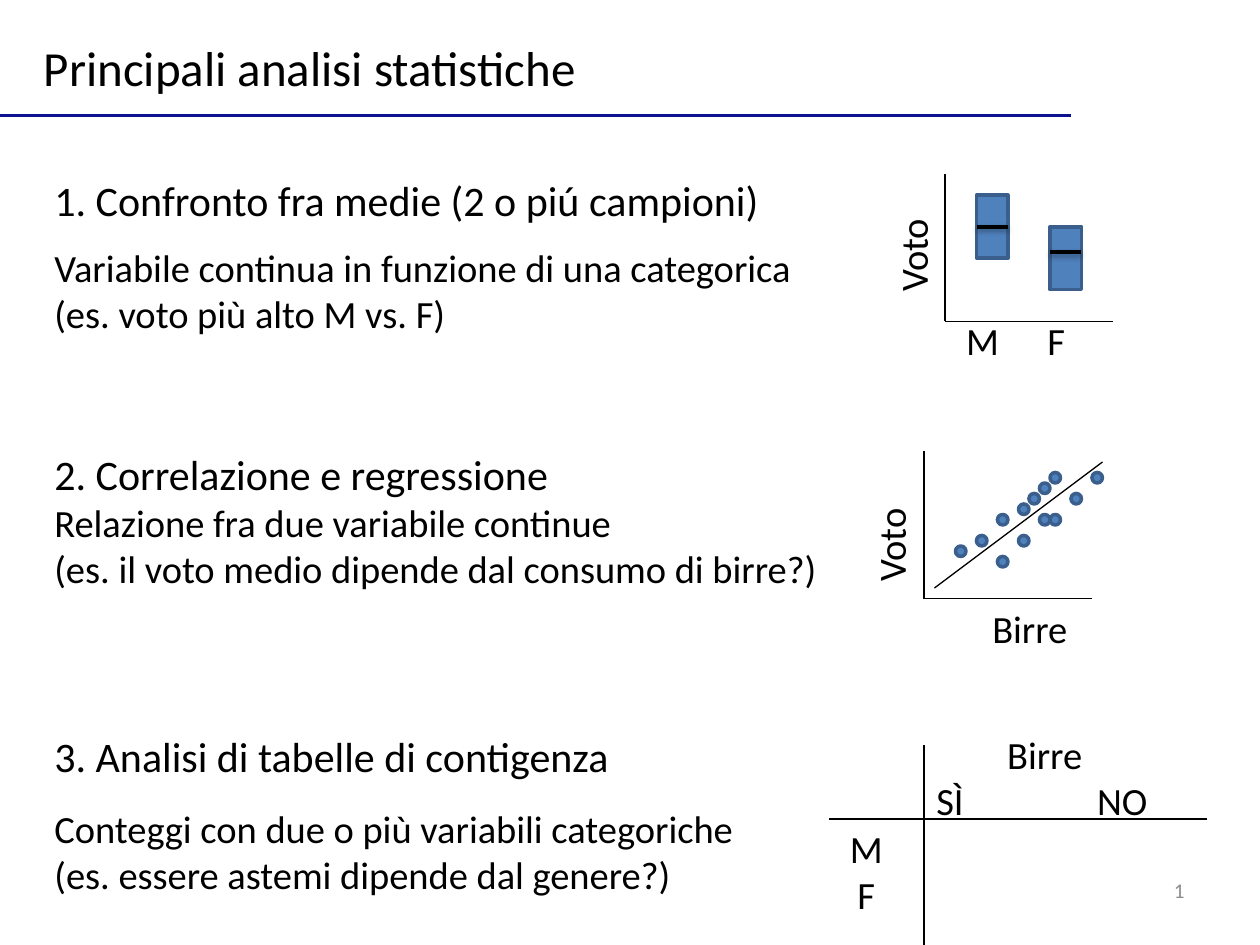
from dataclasses import dataclass
from lxml.etree import SubElement
from pptx import Presentation
from pptx.dml.color import RGBColor as Rgb
from pptx.enum.shapes import MSO_CONNECTOR as Conn, MSO_SHAPE as Kind
from pptx.enum.text import MSO_ANCHOR as Anchor, MSO_AUTO_SIZE as Fit, PP_ALIGN as Align
from pptx.oxml.ns import qn
from pptx.util import Pt


@dataclass(frozen=True)
class Theme:
    font: str = "Calibri"
    ink: str = "000000"
    rule: str = "0C1290"
    fill: str = "4F81BD"
    edge: str = "3A5F8C"
    mute: str = "8C8C8C"
    title: int = 28
    head: int = 24
    body: int = 22
    note: int = 12
    thin: float = 0.75
    bold: int = 2


T = Theme()
PX = 7620
WIDE, HIGH = 1200, 900
LEFT = 40
DOT = 10
BOX = (30, 60)
TAB = 153

TITLE = ("Principali analisi statistiche", (30, 30, 536, 68))
PAGE = ("1", (860, 824, 280, 48))
HEADS = [
    ("1. Confronto fra medie (2 o piú campioni)", 160, 701),
    ("2. Correlazione e regressione", 421, 499),
    ("3. Analisi di tabelle di contigenza", 690, 557),
]
NOTES = [
    (["Variabile continua in funzione di una categorica",
      "(es. voto più alto M vs. F)"], 226, 730, True),
    (["Relazione fra due variabile continue",
      "(es. il voto medio dipende dal consumo di birre?)"], 469, 758, False),
    (["Conteggi con due o più variabili categoriche",
      "(es. essere astemi dipende dal genere?)"], 760, 810, True),
]
LABELS = [
    (["M", "F"], (780, 779, 90, 101), 0),
    (["Birre "], (870, 570, 230, 56), 0),
    (["Voto "], (733, 487, 230, 56), 270),
    (["M "], (900, 296, 80, 56), 0),
    (["F "], (970, 296, 80, 56), 0),
    (["Voto "], (779, 211, 180, 56), 270),
]
LINES = [
    (880, 430, 880, 570), (880, 570, 1040, 570), (890, 560, 1050, 440),
    (790, 780, 1150, 780), (880, 900, 880, 710),
    (900, 166, 900, 306), (900, 306, 1060, 306),
]
BOXES = [(930, 186, 216), (1000, 216, 240)]
DOTS = [
    (930, 510), (950, 530), (970, 510), (970, 480), (980, 470),
    (1000, 490), (950, 490), (910, 520), (990, 490), (990, 460),
    (1000, 450), (1040, 450), (1020, 470),
]


def emu(spot):
    return [n * PX for n in spot]


def apply(item, opts):
    for key, val in opts.items():
        setattr(item, key, val)


def text(rows, spot, size, tint=T.ink, side=(Align.LEFT,), wrap=True, turn=0):
    box = slide.shapes.add_textbox(*emu(spot))
    box.rotation = turn
    frame = box.text_frame
    apply(frame, {"word_wrap": wrap, "vertical_anchor": Anchor.MIDDLE,
                  "auto_size": Fit.SHAPE_TO_FIT_TEXT})
    for i, row in enumerate(rows):
        para = frame.paragraphs[0] if i == 0 else frame.add_paragraph()
        para.alignment = side[min(i, len(side) - 1)]
        run = para.add_run()
        run.text = row
        apply(run.font, {"name": T.font, "size": Pt(size)})
        run.font.color.rgb = Rgb.from_string(tint)
    return frame


def line(spot, tint=T.ink, width=T.thin, shade=False):
    bar = slide.shapes.add_connector(Conn.STRAIGHT, *emu(spot))
    bar.line.color.rgb = Rgb.from_string(tint)
    bar.line.width = Pt(width)
    fx = SubElement(bar._element.spPr, qn("a:effectLst"))
    if shade:
        drop = SubElement(fx, qn("a:outerShdw"), blurRad="40000",
                          dist="20000", dir="5400000", rotWithShape="0")
        hue = SubElement(drop, qn("a:srgbClr"), val=T.ink)
        SubElement(hue, qn("a:alpha"), val="38000")


def mark(kind, spot):
    shape = slide.shapes.add_shape(kind, *emu(spot))
    shape.shadow.inherit = False
    shape.fill.solid()
    shape.fill.fore_color.rgb = Rgb.from_string(T.fill)
    shape.line.color.rgb = Rgb.from_string(T.edge)
    shape.line.width = Pt(T.bold)


deck = Presentation()
apply(deck, {"slide_width": WIDE * PX, "slide_height": HIGH * PX})
slide = deck.slides.add_slide(deck.slide_layouts[6])

text([PAGE[0]], PAGE[1], T.note, T.mute, (Align.RIGHT,))
text([TITLE[0]], TITLE[1], T.title, wrap=False)
line((0, 110, 1020, 110), T.rule, T.bold)

for words, top, width in HEADS:
    text([words], (LEFT, top, width, 60), T.head, wrap=False)
for rows, top, width, wrap in NOTES:
    text(rows, (LEFT, top, width, 101), T.body, wrap=wrap)
for rows, spot, turn in LABELS:
    text(rows, spot, T.body, side=(Align.CENTER,), turn=turn)

cols = text(["Birre", "SÌ\tNO"], (880, 690, 230, 101), T.body,
            side=(Align.CENTER, Align.LEFT))
tabs = SubElement(cols.paragraphs[1]._p.get_or_add_pPr(), qn("a:tabLst"))
SubElement(tabs, qn("a:tab"), pos=str(TAB * PX), algn="l")

for spot in LINES:
    line(spot)
for x, top, mid in BOXES:
    mark(Kind.RECTANGLE, (x, top, *BOX))
    line((x, mid, x + BOX[0], mid), width=T.bold, shade=True)
for x, y in DOTS:
    mark(Kind.OVAL, (x, y, DOT, DOT))

deck.save("out.pptx")
